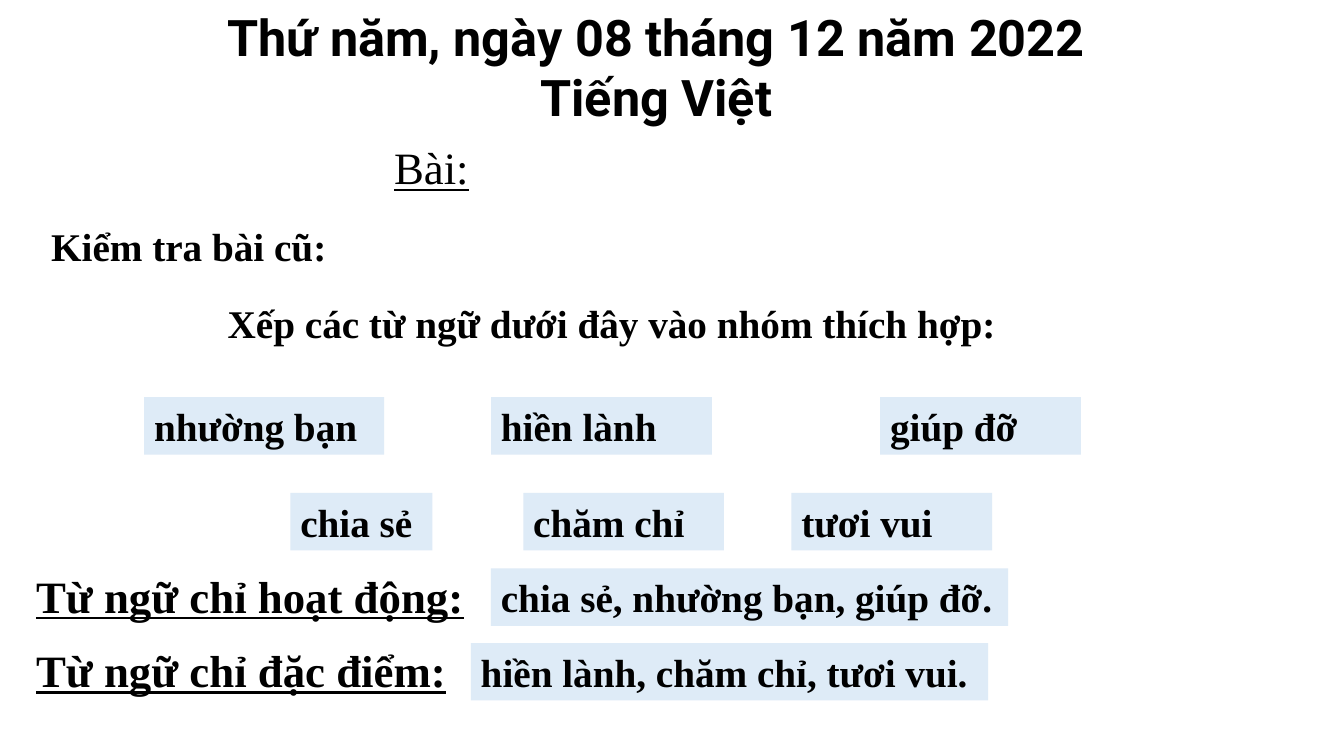
from pptx import Presentation
from pptx.dml.color import RGBColor
from pptx.enum.text import MSO_ANCHOR as Anchor, MSO_AUTO_SIZE as AutoSize, PP_ALIGN as Align
from pptx.util import Inches, Pt

BLACK = RGBColor(0x00, 0x00, 0x00)
WHITE = RGBColor(0xFF, 0xFF, 0xFF)
PALE_BLUE = RGBColor(0xDE, 0xEB, 0xF7)


def write(frame, text, font="Times New Roman", size=28, bold=True,
          underline=False, align=Align.LEFT):
    """Fill a text frame, one paragraph per line of text."""
    frame.word_wrap = True
    frame.auto_size = AutoSize.NONE
    frame.vertical_anchor = Anchor.TOP
    for index, line in enumerate(text.split("\n")):
        para = frame.paragraphs[0] if index == 0 else frame.add_paragraph()
        para.alignment = align
        span = para.add_run()
        span.text = line
        span.font.name = font
        span.font.size = Pt(size)
        span.font.bold = bold
        span.font.underline = underline
        span.font.color.rgb = BLACK


class LessonPage:
    """The current slide and the shared look of its parts."""

    line_height = 0.57
    heading_height = 0.64

    def __init__(self, deck):
        self.page = deck.slides.add_slide(deck.slide_layouts[5])

    def title(self, text, left, top, width, height):
        box = self.page.shapes.title
        box.left, box.top = Inches(left), Inches(top)
        box.width, box.height = Inches(width), Inches(height)
        write(box.text_frame, text, font="Roboto", size=36, align=Align.CENTER)

    def label(self, text, left, top, width, height=line_height, fill=None, **style):
        box = self.page.shapes.add_textbox(
            Inches(left), Inches(top), Inches(width), Inches(height))
        if fill is not None:
            box.fill.solid()
            box.fill.fore_color.rgb = fill
        write(box.text_frame, text, **style)

    def heading(self, text, left, top, width, bold=True):
        self.label(text, left, top, width, self.heading_height,
                   size=32, bold=bold, underline=True)

    def card(self, text, left, top, width):
        self.label(text, left, top, width, fill=PALE_BLUE)


def main():
    deck = Presentation()
    deck.slide_width, deck.slide_height = Inches(13.33), Inches(7.5)
    lesson = LessonPage(deck)

    # Date, subject and lesson
    lesson.title("Thứ năm, ngày 08 tháng 12 năm 2022\nTiếng Việt", 1.69, 0.01, 9.64, 1.92)
    lesson.heading("Bài:", 3.81, 1.34, 1.06, bold=False)

    # Review task
    lesson.label("Kiểm tra bài cũ:", 0.41, 2.16, 3.01, fill=WHITE)
    lesson.label("Xếp các từ ngữ dưới đây vào nhóm thích hợp:", 2.16, 2.92, 8.25)

    # Words to sort, by row: text, left, width
    word_rows = {
        3.94: [("nhường bạn", 1.43, 2.38), ("hiền lành", 4.87, 2.19), ("giúp đỡ", 8.73, 1.99)],
        4.89: [("chia sẻ", 2.88, 1.41), ("chăm chỉ", 5.19, 1.99), ("tươi vui", 7.85, 1.99)],
    }
    for top, words in word_rows.items():
        for word, left, width in words:
            lesson.card(word, left, top, width)

    # Answers: group, its width, words, their left edge, top
    answers = [
        ("Từ ngữ chỉ hoạt động:", 4.77, "chia sẻ, nhường bạn, giúp đỡ.", 4.87, 5.59),
        ("Từ ngữ chỉ đặc điểm:", 4.32, "hiền lành, chăm chỉ, tươi vui.", 4.67, 6.33),
    ]
    for group, group_width, words, left, top in answers:
        lesson.heading(group, 0.26, top, group_width)
        lesson.card(words, left, top + 0.05, 5.13)

    deck.save("out.pptx")


if __name__ == "__main__":
    main()
